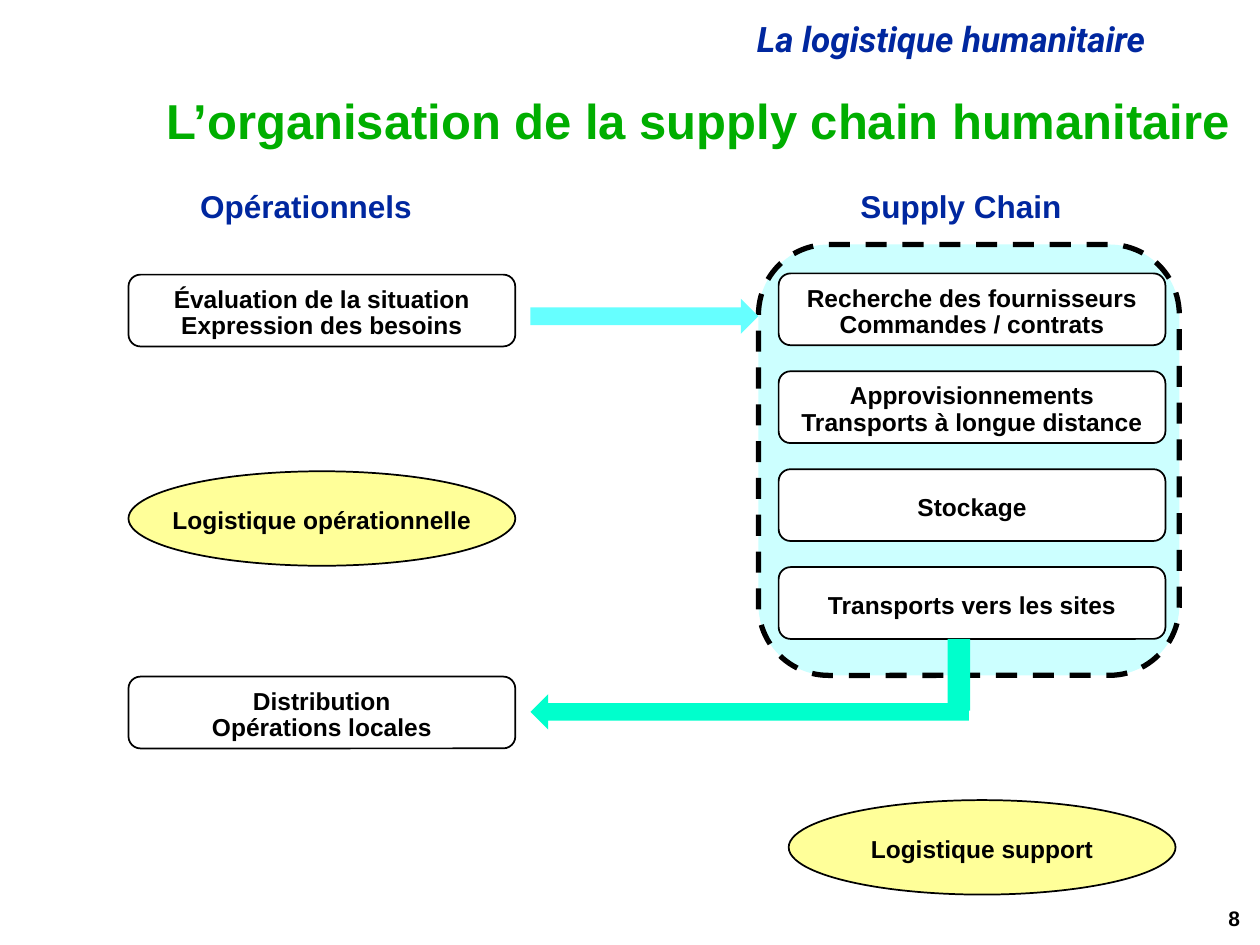
from dataclasses import dataclass
from typing import Optional

from pptx import Presentation
from pptx.dml.color import RGBColor
from pptx.enum.dml import MSO_LINE
from pptx.enum.shapes import MSO_SHAPE
from pptx.enum.text import MSO_ANCHOR, MSO_AUTO_SIZE, PP_ALIGN
from pptx.util import Inches, Pt

NAVY = RGBColor(0x00, 0x27, 0x9F)
GREEN = RGBColor(0x00, 0xAE, 0x00)
BLACK = RGBColor(0x00, 0x00, 0x00)
WHITE = RGBColor(0xFF, 0xFF, 0xFF)
PALE_CYAN = RGBColor(0xCC, 0xFF, 0xFF)
CYAN = RGBColor(0x66, 0xFF, 0xFF)
TURQUOISE = RGBColor(0x00, 0xFF, 0xCC)
YELLOW = RGBColor(0xFF, 0xFF, 0x99)

# The slide is a grid of 100 columns by 75 rows.
CELL = Inches(0.1)
COLUMNS, ROWS = 100, 75

LEFT_COLUMN, RIGHT_COLUMN = 10.2, 61.8
NODE_WIDTH, BOX_HEIGHT, ELLIPSE_HEIGHT = 30.7, 5.7, 7.5
CHAIN_TOP, CHAIN_STEP = 21.7, 7.77
ARROW_LEFT, ARROW_HEIGHT = 42.1, 2.8


@dataclass(frozen=True)
class Area:
    column: float
    row: float
    width: float
    height: float

    def lengths(self) -> tuple:
        return tuple(round(value * CELL) for value in
                     (self.column, self.row, self.width, self.height))


@dataclass(frozen=True)
class Node:
    lines: tuple
    area: Area
    fill: Optional[RGBColor] = None
    kind: MSO_SHAPE = MSO_SHAPE.ROUNDED_RECTANGLE


@dataclass(frozen=True)
class Label:
    text: str
    area: Area
    size: float
    color: RGBColor = NAVY
    font: str = "Arial"
    italic: bool = False
    align: PP_ALIGN = PP_ALIGN.LEFT
    anchor: MSO_ANCHOR = MSO_ANCHOR.TOP


SUPPLY_CHAIN_STEPS = (
    ("Recherche des fournisseurs", "Commandes / contrats"),
    ("Approvisionnements", "Transports à longue distance"),
    ("Stockage",),
    ("Transports vers les sites",),
)

NODES = [
    Node(lines, Area(RIGHT_COLUMN, CHAIN_TOP + index * CHAIN_STEP,
                     NODE_WIDTH, BOX_HEIGHT), WHITE)
    for index, lines in enumerate(SUPPLY_CHAIN_STEPS)
] + [
    Node(("Évaluation de la situation", "Expression des besoins"),
         Area(LEFT_COLUMN, 21.8, NODE_WIDTH, BOX_HEIGHT)),
    Node(("Distribution", "Opérations locales"),
         Area(LEFT_COLUMN, 53.7, NODE_WIDTH, BOX_HEIGHT)),
    Node(("Logistique support",),
         Area(62.6, 63.5, NODE_WIDTH, ELLIPSE_HEIGHT), YELLOW, MSO_SHAPE.OVAL),
    Node(("Logistique opérationnelle",),
         Area(LEFT_COLUMN, 37.4, NODE_WIDTH, ELLIPSE_HEIGHT), YELLOW, MSO_SHAPE.OVAL),
]

LABELS = (
    Label("La logistique humanitaire", Area(59.1, 1.3, 40.6, 4), 20,
          font="Roboto", italic=True),
    Label("Opérationnels", Area(14.9, 14.7, 19, 3.7), 18),
    Label("Supply Chain", Area(67.3, 14.7, 18.8, 3.7), 18),
    Label("8", Area(76.9, 71, 22.5, 4), 12, BLACK,
          align=PP_ALIGN.RIGHT, anchor=MSO_ANCHOR.MIDDLE),
)


def write_text(shape, lines, *, size: float, color: RGBColor, font: str = "Arial",
               italic: bool = False, align: PP_ALIGN = PP_ALIGN.CENTER,
               anchor: MSO_ANCHOR = MSO_ANCHOR.MIDDLE, wrap: bool = True,
               bottom: float = 0.05) -> None:
    frame = shape.text_frame
    frame.auto_size = MSO_AUTO_SIZE.NONE
    frame.word_wrap = wrap
    frame.vertical_anchor = anchor
    frame.margin_left = frame.margin_right = Inches(0.1)
    frame.margin_top, frame.margin_bottom = Inches(0.05), Inches(bottom)
    frame.text = "\n".join(lines)
    for paragraph in frame.paragraphs:
        paragraph.alignment = align
        paragraph.line_spacing = 0.9
        style = paragraph.runs[0].font
        style.name, style.size = font, Pt(size)
        style.bold, style.italic = True, italic
        style.color.rgb = color


def place(shape, area: Area) -> None:
    shape.left, shape.top, shape.width, shape.height = area.lengths()


def add_shape(slide, kind: MSO_SHAPE, area: Area, fill: Optional[RGBColor],
              line_width: float = 0):
    """Add a preset shape; without fill or line width it has none."""
    shape = slide.shapes.add_shape(kind, *area.lengths())
    shape.shadow.inherit = False
    if fill is None:
        shape.fill.background()
    else:
        shape.fill.solid()
        shape.fill.fore_color.rgb = fill
    if line_width:
        shape.line.color.rgb = BLACK
        shape.line.width = Pt(line_width)
    else:
        shape.line.fill.background()
    return shape


def add_node(slide, node: Node) -> None:
    shape = add_shape(slide, node.kind, node.area, node.fill, line_width=1)
    write_text(shape, node.lines, size=14, color=BLACK, wrap=False, bottom=0)


def add_label(slide, label: Label) -> None:
    box = slide.shapes.add_textbox(*label.area.lengths())
    write_text(box, [label.text], size=label.size, color=label.color, font=label.font,
               italic=label.italic, align=label.align, anchor=label.anchor)


def main() -> None:
    presentation = Presentation()
    presentation.slide_width = COLUMNS * CELL
    presentation.slide_height = ROWS * CELL
    slide = presentation.slides.add_slide(presentation.slide_layouts[5])

    title = slide.shapes.title
    place(title, Area(LEFT_COLUMN, 7.3, 88.4, 5))
    write_text(title, ["L’organisation de la supply chain humanitaire"],
               size=28, color=GREEN, align=PP_ALIGN.RIGHT)

    chain_frame = add_shape(slide, MSO_SHAPE.ROUNDED_RECTANGLE,
                            Area(60.2, 19.4, 33.4, 34.2), PALE_CYAN, line_width=3)
    chain_frame.line.dash_style = MSO_LINE.DASH

    for label in LABELS:
        add_label(slide, label)
    for node in NODES:
        add_node(slide, node)

    add_shape(slide, MSO_SHAPE.RIGHT_ARROW,
              Area(ARROW_LEFT, 23.7, 18.1, ARROW_HEIGHT), CYAN)
    add_shape(slide, MSO_SHAPE.LEFT_ARROW,
              Area(ARROW_LEFT, 55.1, 34.8, ARROW_HEIGHT), TURQUOISE)
    add_shape(slide, MSO_SHAPE.RECTANGLE, Area(75.2, 50.7, 1.8, 5.7), TURQUOISE)

    presentation.save("out.pptx")


if __name__ == "__main__":
    main()
